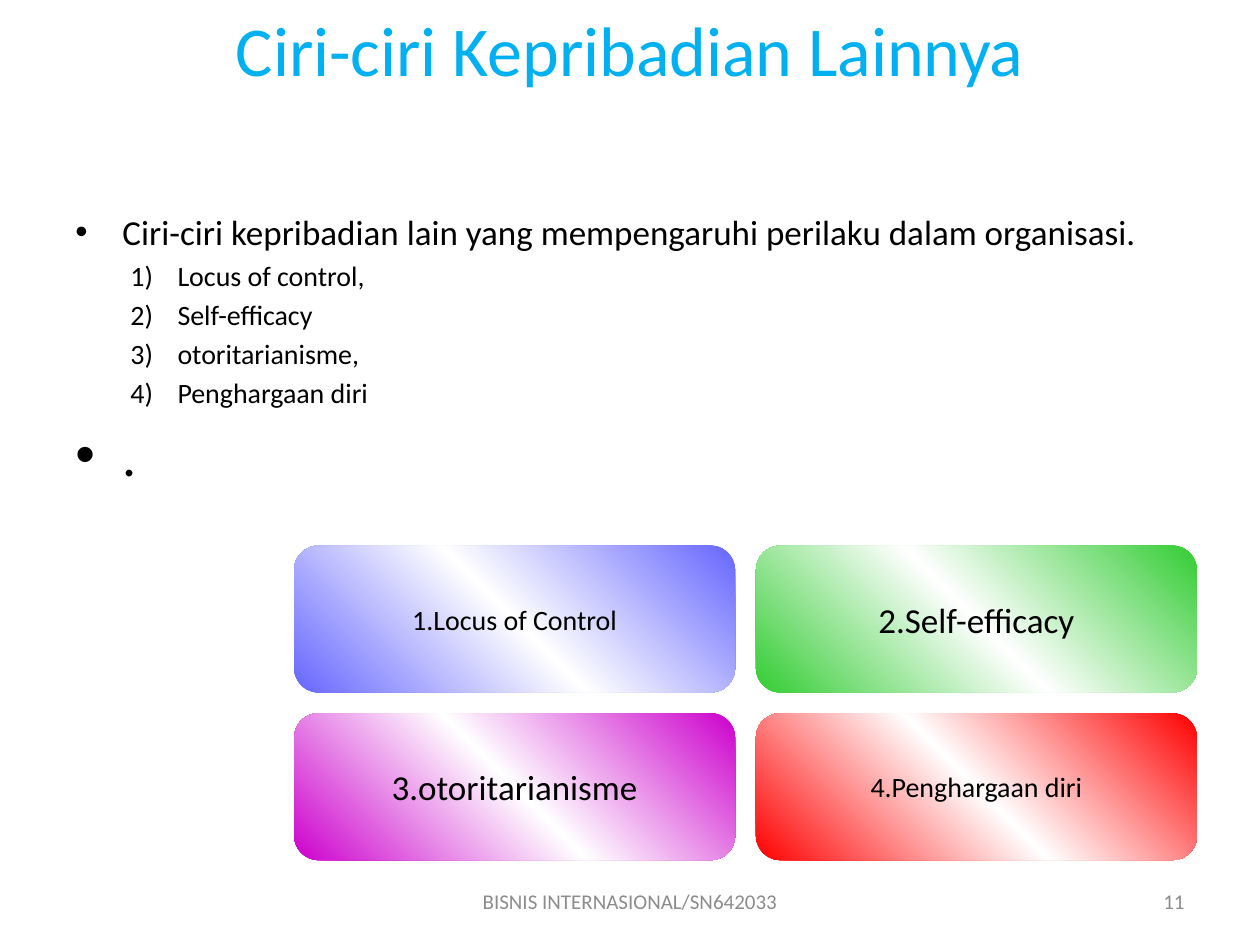
import copy
import pptx
import pptx.util
import pptx.dml.color
import pptx.enum.shapes
import pptx.enum.text
import pptx.oxml
import pptx.oxml.ns

Cm = pptx.util.Cm
Pt = pptx.util.Pt
qn = pptx.oxml.ns.qn
Align = pptx.enum.text.PP_ALIGN
Anchor = pptx.enum.text.MSO_ANCHOR

TITLE = "Ciri-ciri Kepribadian Lainnya"
DOT = ("buChar", "char", "•", 0.95)
NUM = ("buAutoNum", "type", "arabicParenR", 2.06)
BODY = [
    ("Ciri-ciri kepribadian lain yang mempengaruhi perilaku dalam organisasi.", 20, DOT),
    ("Locus of control,", 16, NUM),
    ("Self-efficacy", 16, NUM),
    ("otoritarianisme,", 16, NUM),
    ("Penghargaan diri", 16, NUM),
    (".", 32, DOT),
]
CARDS = [
    ("1.Locus of Control", 16, "6666FF"),
    ("2.Self-efficacy", 20, "33CC33"),
    ("3.otoritarianisme", 20, "CC00CC"),
    ("4.Penghargaan diri", 16, "FF0000"),
]
FOOT = [
    ("BISNIS INTERNASIONAL/SN642033", 8.68, 8.04, Align.CENTER),
    ("11", 18.2, 5.93, Align.RIGHT),
]
LEFT, TOP, WIDE, HIGH, GAP = 5.93, 11.0, 8.89, 2.96, 0.42
INDENT = 0.95


def color(code):
    return pptx.dml.color.RGBColor.from_string(code)


def style(para, text, size, code="000000", align=None):
    para.text = text
    para.alignment = align
    para.font.name = "Calibri"
    para.font.size = Pt(size)
    para.font.color.rgb = color(code)


def add_box(slide, x, y, w, h, anchor=Anchor.TOP):
    frame = slide.shapes.add_textbox(Cm(x), Cm(y), Cm(w), Cm(h)).text_frame
    frame.word_wrap = True
    frame.vertical_anchor = anchor
    return frame


def add_mark(para, mark):
    tag, key, value, left = mark
    props = para._p.get_or_add_pPr()
    props.set("marL", str(Cm(left)))
    props.set("indent", str(-Cm(INDENT)))
    if tag == "buChar":
        font = pptx.oxml.ns.nsdecls("a")
        props.append(pptx.oxml.parse_xml(f'<a:buFont {font} typeface="Arial"/>'))
    bullet = props.makeelement(qn("a:" + tag), {key: value})
    props.append(bullet)


def add_list(slide):
    frame = add_box(slide, 1.27, 4.12, 22.86, 12.57)
    for i, (text, size, mark) in enumerate(BODY):
        para = frame.add_paragraph() if i else frame.paragraphs[0]
        add_mark(para, mark)
        style(para, text, size)
        if i:
            para.space_before = Pt(size * 0.2)


def add_card(slide, i, text, size, code):
    row, col = divmod(i, 2)
    x, y = LEFT + col * (WIDE + GAP), TOP + row * (HIGH + GAP)
    kind = pptx.enum.shapes.MSO_SHAPE.ROUNDED_RECTANGLE
    card = slide.shapes.add_shape(kind, Cm(x), Cm(y), Cm(WIDE), Cm(HIGH))
    card.shadow.inherit = False
    card.line.fill.background()
    card.fill.gradient()
    card.fill.gradient_angle = 45
    first, mid = card.fill.gradient_stops
    first.color.rgb, mid.color.rgb = color(code), color("FFFFFF")
    first.position, mid.position = 0, 0.5
    stops = card._element.spPr.find(".//" + qn("a:gsLst"))
    last = copy.deepcopy(stops[0])
    last.set("pos", "100000")
    stops.append(last)
    frame = card.text_frame
    frame.word_wrap = False
    frame.vertical_anchor = Anchor.MIDDLE
    style(frame.paragraphs[0], text, size, align=Align.CENTER)


def main():
    deck = pptx.Presentation()
    deck.slide_width, deck.slide_height = Cm(25.4), Cm(19.05)
    slide = deck.slides.add_slide(deck.slide_layouts[6])
    head = add_box(slide, 1.27, 0, 22.86, 3.18)
    style(head.paragraphs[0], TITLE, 40, "00B0F0", Align.CENTER)
    add_list(slide)
    for i, card in enumerate(CARDS):
        add_card(slide, i, *card)
    for text, x, w, align in FOOT:
        foot = add_box(slide, x, 17.65, w, 1.02, Anchor.MIDDLE)
        style(foot.paragraphs[0], text, 12, "8C8C8C", align)
    deck.save("out.pptx")


if __name__ == "__main__":
    main()
